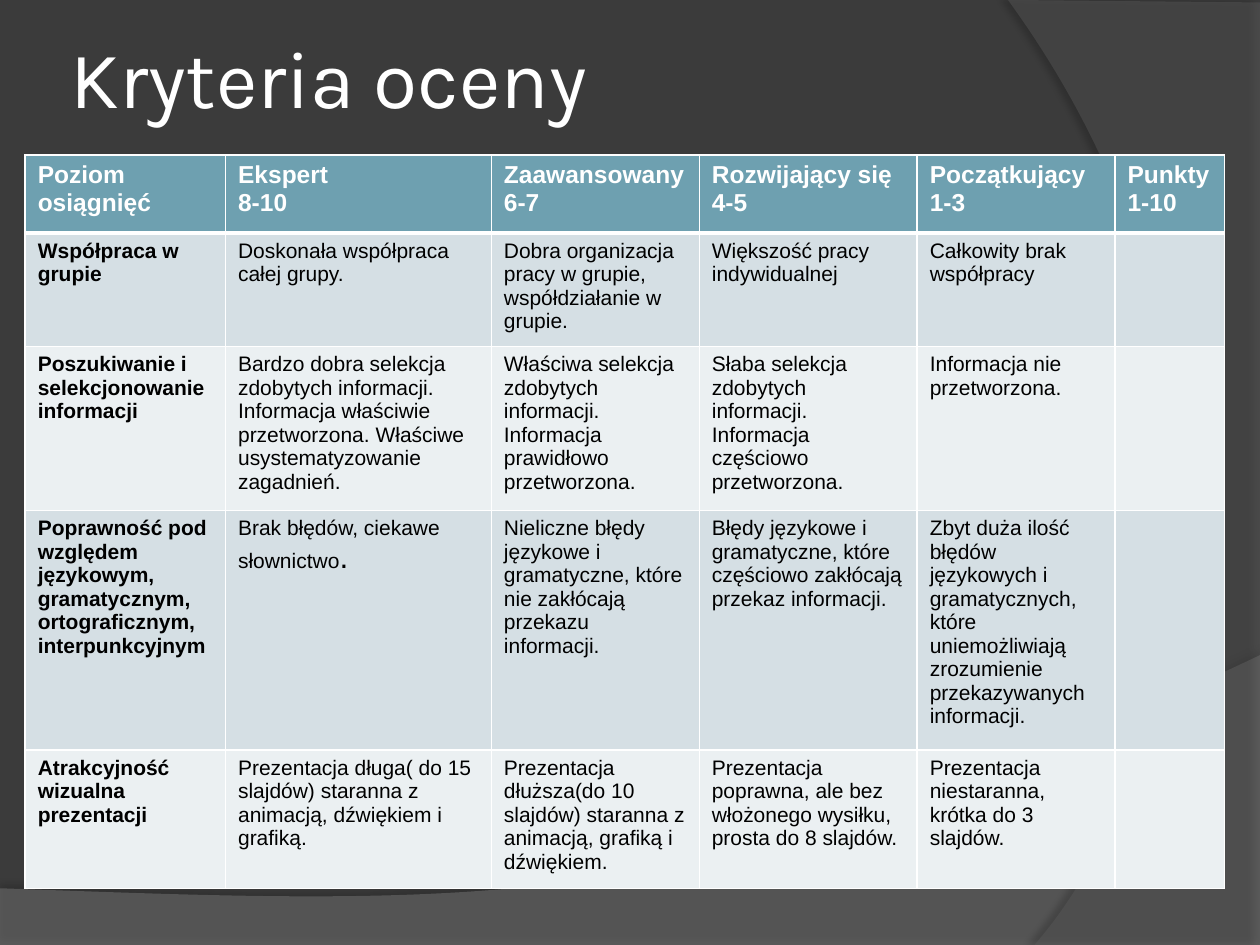
from dataclasses import dataclass

from lxml.etree import SubElement
from pptx import Presentation
from pptx.dml.color import RGBColor
from pptx.enum.text import MSO_ANCHOR
from pptx.oxml.ns import qn
from pptx.util import Inches, Pt

Point = tuple[float, float]


@dataclass(frozen=True)
class Theme:
    background: str = "3B3B3B"
    white: str = "FFFFFF"
    black: str = "000000"
    header_fill: str = "6EA0B0"
    band_fills: tuple[str, str] = ("D5DFE4", "EBF0F2")
    title_font: str = "Karla"
    body_font: str = "Arial"
    title_size: int = 46
    header_size: int = 14
    body_size: int = 12
    large_stop_size: int = 18


@dataclass(frozen=True)
class Wave:
    """Straight corners, then a Bezier curve from the last one to the end."""
    corners: list[Point]
    controls: tuple[Point, Point]
    end: Point
    color: str
    opacity: int
    shadow_opacity: int
    shadow_blur: float
    shadow_distance: float
    shadow_angle: int


@dataclass(frozen=True)
class Criterion:
    name: str
    levels: list[str]
    height: float


THEME = Theme()

WAVES = [
    Wave([(0, 7.05), (0, 7.5), (10, 7.5), (10, 5.2)],
         ((5.59, 7.29), (3.91, 7.19)), (0, 7.05), "7F7F7F", 45, 35, 4, 3.5, 270),
    Wave([(10, 0.02), (10, 7.5), (8.21, 7.5)],
         ((9.35, 6.19), (10.18, 3)), (8, 0), "5E5E5E", 40, 45, 4, 4, 180),
]

TABLE_WIDTH, TABLE_HEIGHT = 9.53, 5.82
COLUMN_WIDTHS = [1.59, 2.11, 1.65, 1.73, 1.57, 0.87]
HEADER_HEIGHT = 0.62
HEADERS = ["Poziom osiągnięć", "Ekspert\n8-10", "Zaawansowany\n6-7",
           "Rozwijający się\n4-5", "Początkujący\n1-3", "Punkty\n1-10"]
ENLARGED_STOP = "Brak błędów, ciekawe słownictwo."
# Row heights are minimums: rows grow to fit their text
CRITERIA = [
    Criterion("Współpraca w grupie", [
        "Doskonała współpraca całej grupy.",
        "Dobra organizacja pracy w grupie, współdziałanie w grupie.",
        "Większość pracy indywidualnej",
        "Całkowity brak współpracy"], 0.57),
    Criterion("Poszukiwanie i selekcjonowanie informacji", [
        "Bardzo dobra selekcja zdobytych informacji. Informacja właściwie "
        "przetworzona. Właściwe usystematyzowanie zagadnień.",
        "Właściwa selekcja zdobytych informacji. Informacja prawidłowo przetworzona.",
        "Słaba selekcja zdobytych informacji. Informacja częściowo przetworzona.",
        "Informacja nie przetworzona."], 0.91),
    Criterion("Poprawność pod względem językowym, gramatycznym, "
              "ortograficznym, interpunkcyjnym", [
        ENLARGED_STOP,
        "Nieliczne błędy językowe i gramatyczne, które nie zakłócają "
        "przekazu informacji.",
        "Błędy językowe i gramatyczne, które częściowo zakłócają przekaz informacji.",
        "Zbyt duża ilość błędów językowych i gramatycznych, które "
        "uniemożliwiają zrozumienie przekazywanych informacji."], 1.54),
    Criterion("Atrakcyjność wizualna prezentacji", [
        "Prezentacja długa( do 15 slajdów) staranna z animacją, dźwiękiem i grafiką.",
        "Prezentacja dłuższa(do 10 slajdów) staranna z animacją, grafiką i dźwiękiem.",
        "Prezentacja poprawna, ale bez włożonego wysiłku, prosta do 8 slajdów.",
        "Prezentacja niestaranna, krótka do 3 slajdów."], 0.91),
]


def rgb(color: str) -> RGBColor:
    return RGBColor.from_string(color)


def add_run(paragraph, text: str, font: str, size: int, color: str,
            bold: bool = False) -> None:
    run = paragraph.add_run()
    run.text = text
    run.font.name = font
    run.font.size = Pt(size)
    run.font.bold = bold
    run.font.color.rgb = rgb(color)


def curve_last_segment(shape, controls: tuple[Point, Point]) -> None:
    """Turn the last straight segment into a cubic Bezier curve."""
    segment = list(shape.element.spPr.iter(qn("a:lnTo")))[-1]
    curve = segment.makeelement(qn("a:cubicBezTo"))
    for x, y in controls:
        SubElement(curve, qn("a:pt"), x=str(Inches(x) - shape.left),
                   y=str(Inches(y) - shape.top))
    curve.append(segment[0])
    segment.getparent().replace(segment, curve)


def set_opacity(color_element, percent: int) -> None:
    SubElement(color_element, qn("a:alpha"), val=str(percent * 1000))


def draw_wave(slide, wave: Wave) -> None:
    start, *corners = wave.corners
    builder = slide.shapes.build_freeform(
        Inches(start[0]), Inches(start[1]))
    builder.add_line_segments(
        [(Inches(x), Inches(y)) for x, y in [*corners, wave.end]])
    shape = builder.convert_to_shape()
    curve_last_segment(shape, wave.controls)
    shape.fill.solid()
    shape.fill.fore_color.rgb = rgb(wave.color)
    shape.line.fill.background()
    properties = shape.element.spPr
    set_opacity(properties.find(qn("a:solidFill")).find(qn("a:srgbClr")), wave.opacity)
    # Soft edge shadow
    shape.shadow.inherit = False
    shadow = SubElement(
        properties.find(qn("a:effectLst")), qn("a:outerShdw"),
        blurRad=str(Pt(wave.shadow_blur)), dist=str(Pt(wave.shadow_distance)),
        dir=str(wave.shadow_angle * 60000), rotWithShape="0")
    set_opacity(SubElement(shadow, qn("a:srgbClr"), val=THEME.black),
                wave.shadow_opacity)


def draw_title(slide) -> None:
    title = slide.shapes.add_textbox(
        Inches(0.51), Inches(0.13), Inches(8.17), Inches(0.95))
    frame = title.text_frame
    frame.word_wrap = True
    frame.vertical_anchor = MSO_ANCHOR.MIDDLE
    frame.margin_left = frame.margin_right = Inches(0.05)
    add_run(frame.paragraphs[0], "Kryteria oceny", THEME.title_font,
            THEME.title_size, THEME.white)


def style_cell(cell, fill: str, bottom: int = 1, top: int = 1) -> None:
    properties = cell._tc.get_or_add_tcPr()
    for side, width in (("L", 1), ("R", 1), ("T", top), ("B", bottom)):
        line = SubElement(properties, qn(f"a:ln{side}"), w=str(Pt(width)))
        SubElement(SubElement(line, qn("a:solidFill")), qn("a:srgbClr"),
                   val=THEME.white)
    cell.fill.solid()
    cell.fill.fore_color.rgb = rgb(fill)


def draw_criteria_table(slide) -> None:
    heights = [HEADER_HEIGHT] + [criterion.height for criterion in CRITERIA]
    table_frame = slide.shapes.add_table(
        len(heights), len(COLUMN_WIDTHS), Inches(0.2), Inches(1.23),
        Inches(TABLE_WIDTH), Inches(TABLE_HEIGHT))
    table = table_frame.table
    for column, width in zip(table.columns, COLUMN_WIDTHS):
        column.width = Inches(width)
    for row, height in zip(table.rows, heights):
        row.height = Inches(height)
    # Sizing rows and columns resizes the frame, so set it last
    table_frame.width, table_frame.height = Inches(TABLE_WIDTH), Inches(TABLE_HEIGHT)

    # Header row
    for cell, header in zip(table.rows[0].cells, HEADERS):
        style_cell(cell, THEME.header_fill, bottom=3)
        frame = cell.text_frame
        for index, line in enumerate(header.split("\n")):
            paragraph = frame.add_paragraph() if index else frame.paragraphs[0]
            add_run(paragraph, line, THEME.body_font, THEME.header_size,
                    THEME.white, bold=True)

    # Criteria rows, with the points column left empty
    for index, criterion in enumerate(CRITERIA):
        cells = list(table.rows[index + 1].cells)
        for cell in cells:
            style_cell(cell, THEME.band_fills[index % 2], top=1 if index else 3)
        for column, (cell, text) in enumerate(
                zip(cells, [criterion.name, *criterion.levels])):
            paragraph = cell.text_frame.paragraphs[0]
            enlarged = text == ENLARGED_STOP
            add_run(paragraph, text[:-1] if enlarged else text, THEME.body_font,
                    THEME.body_size, THEME.black, bold=column == 0)
            if enlarged:
                add_run(paragraph, text[-1], THEME.body_font,
                        THEME.large_stop_size, THEME.black)


def main() -> None:
    deck = Presentation()
    deck.slide_width, deck.slide_height = Inches(10), Inches(7.5)
    slide = deck.slides.add_slide(deck.slide_layouts[6])
    slide.background.fill.solid()
    slide.background.fill.fore_color.rgb = rgb(THEME.background)
    for wave in WAVES:
        draw_wave(slide, wave)
    draw_title(slide)
    draw_criteria_table(slide)
    deck.save("out.pptx")


if __name__ == "__main__":
    main()
